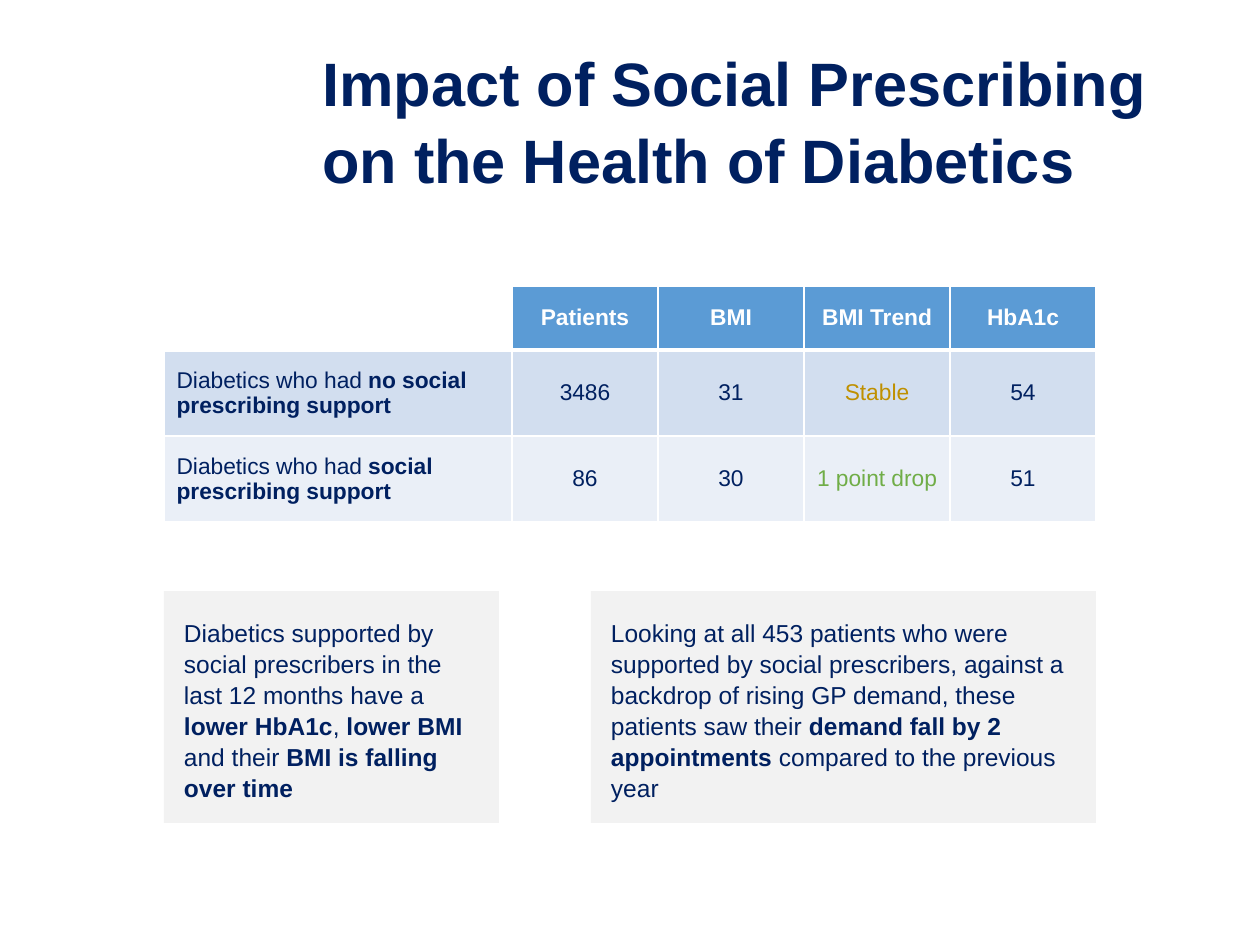
import pptx
import pptx.dml.color
import pptx.enum.shapes
import pptx.enum.text
import pptx.oxml.ns
import pptx.util
from lxml import etree

PX = 914400 / 126
COLORS = {
    "navy": "002060", "white": "FFFFFF", "header": "5B9BD5",
    "band": "D2DEEF", "light": "EAEFF7", "panel": "F2F2F2",
    "gold": "BF9000", "green": "70AD47",
}
HEADERS = ["", "Patients", "BMI", "BMI Trend", "HbA1c"]
GROUPS = [
    ["Diabetics who had **no social prescribing support**", "3486", "31", "Stable", "54"],
    ["Diabetics who had **social prescribing support**", "86", "30", "1 point drop", "51"],
]
TREND_COLORS = {"Stable": "gold", "1 point drop": "green"}
PANELS = [
    (591, 505, "Looking at all 453 patients who were supported by social prescribers, "
     "against a backdrop of rising GP demand, these patients saw their "
     "**demand fall by 2 appointments **compared to the previous year"),
    (164, 335, "Diabetics supported by social prescribers in the last 12 months have a"
     "** lower HbA1c**,** lower BMI **and their **BMI is falling over time**"),
]


def px(length):
    """Turn pixels into EMU."""
    return pptx.util.Emu(round(length * PX))


def rgb(name):
    """Look up a named colour."""
    return pptx.dml.color.RGBColor.from_string(COLORS[name])


def write(frame, text, size, color="navy", bold=False, align="LEFT", spacing=1.0):
    """Write one paragraph, where ** switches bold on and off."""
    paragraph = frame.paragraphs[0]
    paragraph.alignment = getattr(pptx.enum.text.PP_ALIGN, align)
    paragraph.line_spacing = spacing
    for index, part in enumerate(text.split("**")):
        if part:
            run = paragraph.add_run()
            run.text = part
            run.font.name = "Arial"
            run.font.size = pptx.util.Pt(size)
            run.font.bold = bold or index % 2 == 1
            run.font.color.rgb = rgb(color)


def add_title(slide, text):
    """Add the slide heading."""
    box = slide.shapes.add_textbox(px(310), px(35), px(903), px(90))
    box.text_frame.word_wrap = True
    write(box.text_frame, text, 35, bold=True, spacing=1.05)


def add_panel(slide, left, width, text):
    """Add a grey panel with a finding."""
    panel = slide.shapes.add_shape(
        pptx.enum.shapes.MSO_SHAPE.RECTANGLE, px(left), px(591), px(width), px(232))
    panel.shadow.inherit = False
    panel.fill.solid()
    panel.fill.fore_color.rgb = rgb("panel")
    panel.line.fill.background()
    frame = panel.text_frame
    frame.word_wrap = True
    frame.vertical_anchor = pptx.enum.text.MSO_ANCHOR.TOP
    frame.margin_left = frame.margin_right = px(20)
    frame.margin_top = frame.margin_bottom = px(26)
    write(frame, text, 14, spacing=1.05)


def style_cell(cell, fill, bottom):
    """Give a cell its borders, fill and anchor."""
    cell.vertical_anchor = pptx.enum.text.MSO_ANCHOR.MIDDLE
    properties = cell._tc.get_or_add_tcPr()
    for side, points in (("L", 1), ("R", 1), ("T", 1), ("B", bottom)):
        edge = etree.SubElement(properties, pptx.oxml.ns.qn(f"a:ln{side}"),
                                w=str(pptx.util.Pt(points)))
        solid = etree.SubElement(edge, pptx.oxml.ns.qn("a:solidFill"))
        etree.SubElement(solid, pptx.oxml.ns.qn("a:srgbClr"), val=COLORS["white"])
    if fill:
        cell.fill.solid()
        cell.fill.fore_color.rgb = rgb(fill)
    else:
        cell.fill.background()


def add_results(slide):
    """Add the table comparing both patient groups."""
    widths, heights = [348] + [146] * 4, [64, 86, 86]
    table = slide.shapes.add_table(
        3, 5, px(164), px(286), px(sum(widths)), px(sum(heights))).table
    for column, width in zip(table.columns, widths):
        column.width = px(width)
    for row, height in zip(table.rows, heights):
        row.height = px(height)
    for r, values in enumerate([HEADERS] + GROUPS):
        for c, value in enumerate(values):
            cell = table.cell(r, c)
            fill = ("header", "band", "light")[r] if value else None
            style_cell(cell, fill, 1 if r else 3)
            color = TREND_COLORS.get(value, "navy") if r else "white"
            write(cell.text_frame, value, 13, color=color, bold=r == 0,
                  align="CENTER" if c else "LEFT")


def main():
    """Build and save the slide."""
    deck = pptx.Presentation()
    deck.slide_width, deck.slide_height = px(1260), px(945)
    slide = deck.slides.add_slide(deck.slide_layouts[6])
    add_results(slide)
    add_title(slide, "Impact of Social Prescribing on the Health of Diabetics")
    for left, width, text in PANELS:
        add_panel(slide, left, width, text)
    deck.save("out.pptx")


if __name__ == "__main__":
    main()
